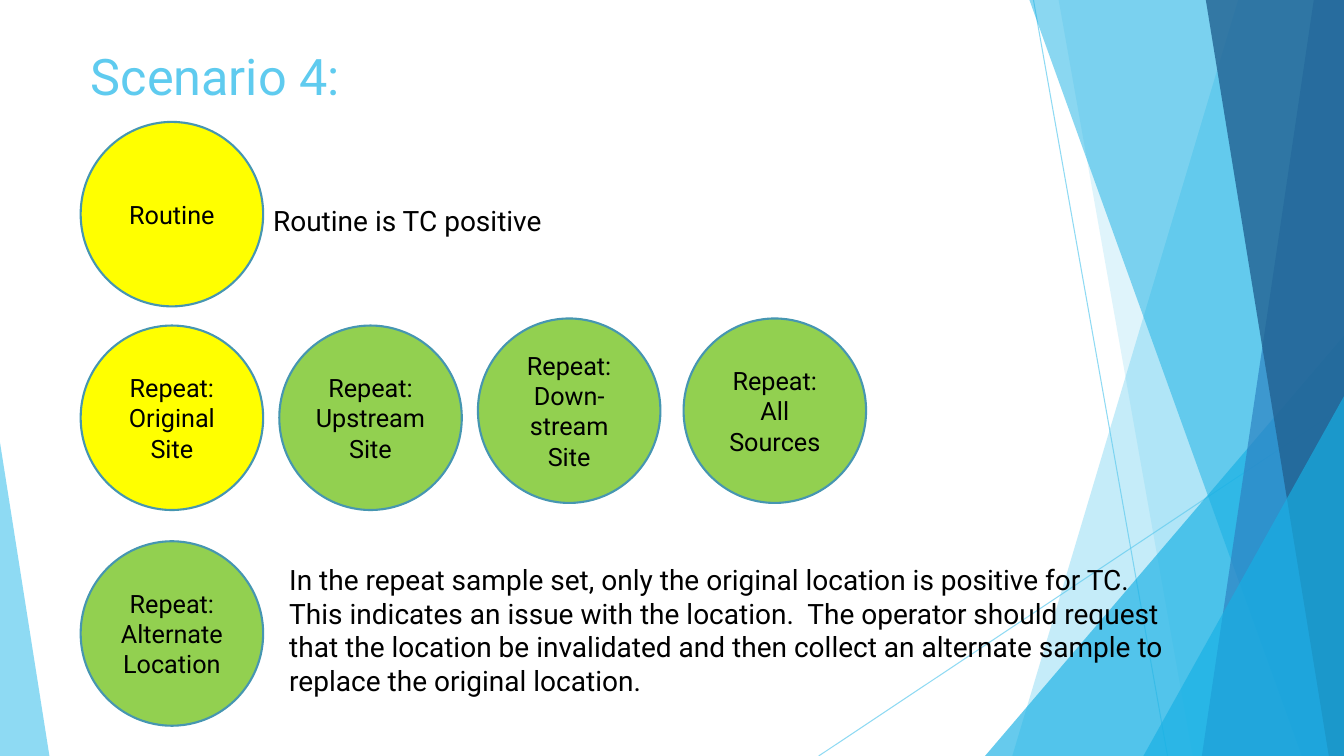
import pptx
import pptx.util
import pptx.dml.color
import pptx.enum.shapes
import pptx.enum.text
import pptx.oxml
import pptx.oxml.ns

COLORS = {"sky": "5FCBEF", "aqua": "17B0E4", "blue": "2E83C3", "navy": "226292",
          "edge": "4696B1", "yellow": "FFFF00", "green": "92D050", "black": "000000"}
FONT = "Roboto"
COLS, ROWS = 1333, 750
WIDE, HIGH = pptx.util.Inches(13.33), pptx.util.Inches(7.5)
SHAPE = pptx.enum.shapes.MSO_SHAPE
ALIGN = pptx.enum.text.PP_ALIGN
ANCHOR = pptx.enum.text.MSO_ANCHOR


def spot(x, y):
    """Turn grid columns and rows into slide lengths."""
    return round(x * WIDE / COLS), round(y * HIGH / ROWS)


def area(x, y, w, h):
    return *spot(x, y), *spot(w, h)


def tone(name):
    return pptx.dml.color.RGBColor.from_string(COLORS[name])


def fade(part, share):
    """Set the opacity of the first colour in a fill or line."""
    color = part.find(".//" + pptx.oxml.ns.qn("a:srgbClr"))
    alpha = pptx.oxml.parse_xml(
        f'<a:alpha {pptx.oxml.ns.nsdecls("a")} val="{share * 1000}"/>')
    color.append(alpha)


def tint(shape, color, share):
    shape.shadow.inherit = False
    shape.fill.solid()
    shape.fill.fore_color.rgb = tone(color)
    shape.line.fill.background()
    fade(shape._element.spPr, share)


def write(shape, lines, size, color="black", align=ALIGN.LEFT, anchor=ANCHOR.TOP,
          side=0.1):
    frame = shape.text_frame
    pad = pptx.util.Inches(side)
    form = {"word_wrap": True, "vertical_anchor": anchor,
            "margin_left": pad, "margin_right": pad}
    for key, value in form.items():
        setattr(frame, key, value)
    frame.text = "\n".join(lines)
    style = {"name": FONT, "size": pptx.util.Pt(size), "bold": False}
    for para in frame.paragraphs:
        para.alignment = align
        for run in para.runs:
            for key, value in style.items():
                setattr(run.font, key, value)
            run.font.color.rgb = tone(color)


# Decoration
def add_ray(slide, start, end):
    ray = slide.shapes.add_connector(
        pptx.enum.shapes.MSO_CONNECTOR.STRAIGHT, *spot(*start), *spot(*end))
    ray.line.color.rgb = tone("sky")
    ray.line.width = pptx.util.Pt(0.75)
    props = ray._element.spPr
    fade(props, 70)
    props.append(pptx.oxml.parse_xml(f'<a:effectLst {pptx.oxml.ns.nsdecls("a")}/>'))


def add_band(slide, box, top, foot, color, share):
    """Fill from a slanted left side to the right side of the box."""
    x, y, w, h = box
    start, *rest = [spot(x + dx, y + dy)
                    for dx, dy in ((top, 0), (w, 0), (w, h), (foot, h))]
    band = slide.shapes.build_freeform(*start, scale=1)
    band.add_line_segments(rest, close=True)
    tint(band.convert_to_shape(), color, share)


def add_wedge(slide, box, peak, color, share):
    wedge = slide.shapes.add_shape(SHAPE.ISOSCELES_TRIANGLE, *area(*box))
    wedge.adjustments[0] = peak
    tint(wedge, color, share)


def add_decor(slide, box):
    x, y, w, h = box
    right, base = x + w, y + h
    add_ray(slide, (x + 48, y), (x + 181, base))
    add_ray(slide, (right, y + 403), (x - 165, base))
    add_band(slide, box, 251, 27, "sky", 36)
    add_band(slide, box, 73, 206, "sky", 20)
    add_wedge(slide, (x, base - 417, w, 417), 1, "aqua", 66)
    add_band(slide, box, 44, 314, "aqua", 50)
    add_band(slide, box, 326, 215, "blue", 70)
    add_band(slide, box, 219, 341, "navy", 80)
    add_wedge(slide, (right - 199, base - 357, 199, 357), 1, "aqua", 66)
    add_wedge(slide, (0, base - 311, 49, 311), 0, "sky", 70)


# Title
def add_title(slide, box):
    title = slide.shapes.title
    slide.shapes._spTree.append(title._element)  # in front of the decoration
    names = ("left", "top", "width", "height")
    for key, value in zip(names, area(*box)):
        setattr(title, key, value)
    write(title, ["Scenario 4:"], 36, "sky")


# Samples
def add_dot(slide, box, color, lines):
    dot = slide.shapes.add_shape(SHAPE.FLOWCHART_CONNECTOR, *area(*box))
    dot.shadow.inherit = False
    dot.fill.solid()
    dot.fill.fore_color.rgb = tone(color)
    dot.line.color.rgb = tone("edge")
    dot.line.width = pptx.util.Pt(1.5)
    # Narrow side margins keep the longest word on one line
    write(dot, lines, 18, align=ALIGN.CENTER, anchor=ANCHOR.MIDDLE, side=0.08)


def add_note(slide, box, text):
    write(slide.shapes.add_textbox(*area(*box)), [text], 20)


def add_dots(slide, box):
    x, y, w, h = box
    wide, high, step = 181, 183, 197
    dots = [
        (0, 0, "yellow", ["Routine"]),
        (0, 202, "yellow", ["Repeat:", "Original Site"]),
        (step, 202, "green", ["Repeat:", "Upstream Site"]),
        (2 * step, 195, "green", ["Repeat:", "Down-stream Site"]),
        (w - wide, 195, "green", ["Repeat:", "All Sources"]),
        (0, h - high, "green", ["Repeat:", "Alternate Location"]),
    ]
    for dx, dy, color, lines in dots:
        add_dot(slide, (x + dx, y + dy, wide, high), color, lines)
    add_note(slide, (x + wide, y + 76, 940, 48), "Routine is TC positive")
    add_note(slide, (x + step, y + 432, 891, 158),
             "In the repeat sample set, only the original location is positive for TC.  "
             "This indicates an issue with the location.  The operator should request "
             "that the location be invalidated and then collect an alternate sample to "
             "replace the original location.")


def main():
    deck = pptx.Presentation()
    deck.slide_width, deck.slide_height = WIDE, HIGH
    slide = deck.slides.add_slide(deck.slide_layouts.get_by_name("Title Only"))
    add_decor(slide, (977, 0, 356, ROWS))
    add_title(slide, (80, 40, 940, 80))
    add_dots(slide, (80, 121, 779, 599))
    deck.save("out.pptx")


if __name__ == "__main__":
    main()
